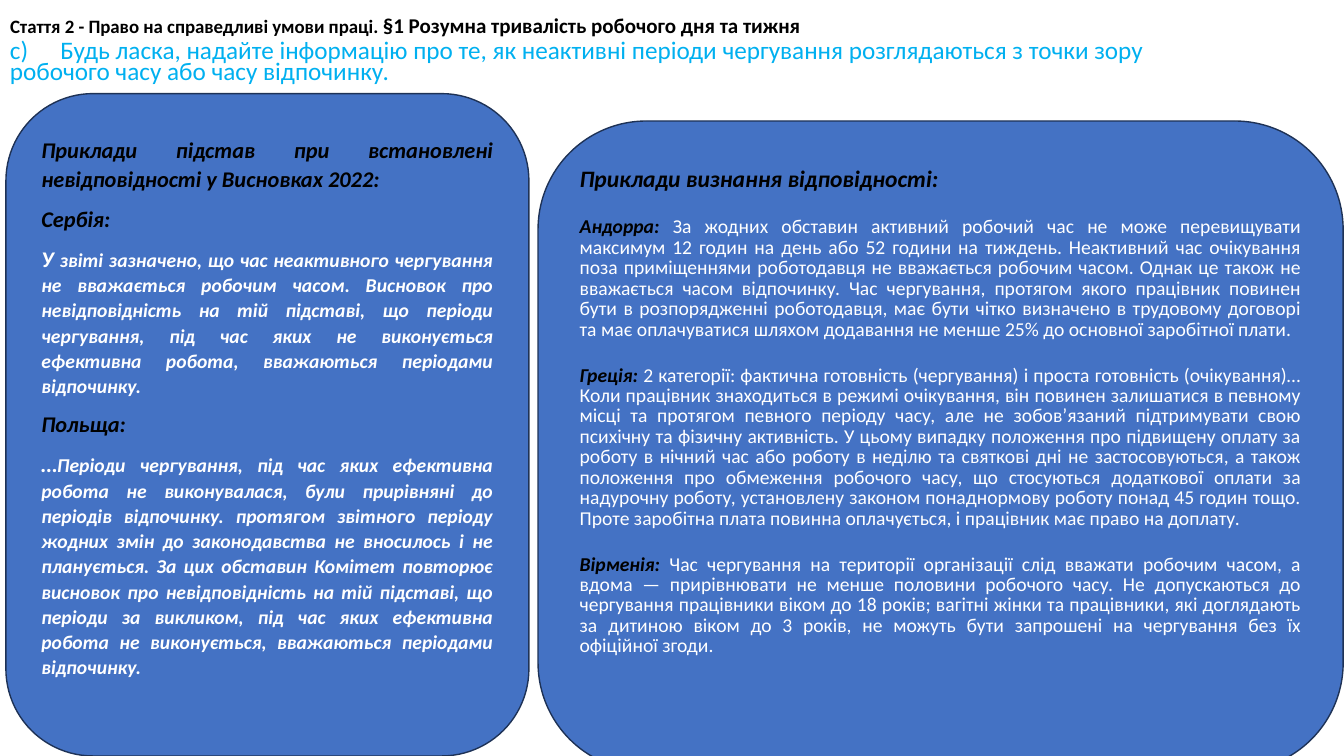
import dataclasses

import pptx
import pptx.dml.color
import pptx.enum.shapes
import pptx.enum.text
import pptx.util

Cm = pptx.util.Cm
Pt = pptx.util.Pt
RGB = pptx.dml.color.RGBColor
ALIGN = pptx.enum.text.PP_ALIGN


@dataclasses.dataclass(frozen=True)
class Theme:
    font: str = "Calibri"
    black: RGB = RGB(0x00, 0x00, 0x00)
    white: RGB = RGB(0xFF, 0xFF, 0xFF)
    question: RGB = RGB(0x00, 0xB0, 0xF0)
    panel: RGB = RGB(0x44, 0x72, 0xC4)
    outline: RGB = RGB(0x1E, 0x32, 0x56)
    article_size: float = 13.5
    section_size: float = 15
    question_size: float = 18
    heading_size: float = 16
    wide_heading_size: float = 16.8
    body_size: float = 14


THEME = Theme()

FINDINGS = [
    ("Сербія:", "У ",
     "звіті зазначено, що час неактивного чергування не вважається робочим часом. "
     "Висновок про невідповідність на тій підставі, що періоди чергування, під час яких "
     "не виконується ефективна робота, вважаються періодами відпочинку."),
    ("Польща:", "…",
     "Періоди чергування, під час яких ефективна робота не виконувалася, були прирівняні "
     "до періодів відпочинку. протягом звітного періоду жодних змін до законодавства не "
     "вносилось і не планується. За цих обставин Комітет повторює висновок про "
     "невідповідність на тій підставі, що періоди за викликом, під час яких ефективна "
     "робота не виконується, вважаються періодами відпочинку."),
]

CONFORMITY = [
    ("Андорра: ",
     "За жодних обставин активний робочий час не може перевищувати максимум 12 годин на "
     "день або 52 години на тиждень. Неактивний час очікування поза приміщеннями "
     "роботодавця не вважається робочим часом. Однак це також не вважається часом "
     "відпочинку. Час чергування, протягом якого працівник повинен бути в розпорядженні "
     "роботодавця, має бути чітко визначено в трудовому договорі та має оплачуватися "
     "шляхом додавання не менше 25% до основної заробітної плати."),
    ("Греція: ",
     "2 категорії: фактична готовність (чергування) і проста готовність (очікування)…"
     "Коли працівник знаходиться в режимі очікування, він повинен залишатися в певному "
     "місці та протягом певного періоду часу, але не зобов’язаний підтримувати свою "
     "психічну та фізичну активність. У цьому випадку положення про підвищену оплату за "
     "роботу в нічний час або роботу в неділю та святкові дні не застосовуються, а також "
     "положення про обмеження робочого часу, що стосуються додаткової оплати за "
     "надурочну роботу, установлену законом понаднормову роботу понад 45 годин тощо. "
     "Проте заробітна плата повинна оплачується, і працівник має право на доплату."),
    ("Вірменія: ",
     "Час чергування на території організації слід вважати робочим часом, а вдома — "
     "прирівнювати не менше половини робочого часу. Не допускаються до чергування "
     "працівники віком до 18 років; вагітні жінки та працівники, які доглядають за "
     "дитиною віком до 3 років, не можуть бути запрошені на чергування без їх офіційної "
     "згоди."),
]


def add_run(p, text, size, color, bold=False, italic=False):
    r = p.add_run()
    r.text = text
    r.font.name = THEME.font
    r.font.size = Pt(size)
    r.font.color.rgb = color
    r.font.bold = bold
    r.font.italic = italic


def prepare_frame(sp, top_inset):
    """Wrap the text and start it at the given depth below the top."""
    tf = sp.text_frame
    tf.word_wrap = True
    tf.auto_size = pptx.enum.text.MSO_AUTO_SIZE.NONE
    tf.vertical_anchor = pptx.enum.text.MSO_ANCHOR.TOP
    tf.margin_top = top_inset
    return tf


def add_paragraph(tf, align, line_spacing, before=0, after=0):
    """Use the empty first paragraph, then append new ones."""
    p = tf.paragraphs[0] if not tf.paragraphs[0].runs else tf.add_paragraph()
    p.alignment = align
    p.line_spacing = line_spacing
    p.space_before = Pt(before)
    p.space_after = Pt(after)
    return p


def add_panel(s, left, top, width, height, top_inset):
    sp = s.shapes.add_shape(pptx.enum.shapes.MSO_SHAPE.ROUNDED_RECTANGLE,
                            left, top, width, height)
    sp.shadow.inherit = False
    sp.fill.solid()
    sp.fill.fore_color.rgb = THEME.panel
    sp.line.color.rgb = THEME.outline
    sp.line.width = Pt(1)
    return prepare_frame(sp, top_inset)


def set_title(s):
    sp = s.shapes.title
    sp.left, sp.top, sp.width, sp.height = Cm(0), Cm(0), Cm(24.36), Cm(1.63)
    p = add_paragraph(prepare_frame(sp, Cm(0.48)), ALIGN.LEFT, 0.7)
    add_run(p, "Стаття 2 - Право на справедливі умови праці. ",
            THEME.article_size, THEME.black, bold=True)
    add_run(p, "§1 Розумна тривалість робочого дня та тижня",
            THEME.section_size, THEME.black, bold=True)


def add_question(s):
    sp = s.shapes.add_textbox(Cm(0), Cm(0.38), Cm(29.21), Cm(2.67))
    p = add_paragraph(prepare_frame(sp, Cm(0.69)), ALIGN.LEFT, 0.7)
    add_run(p, "c)\tБудь ласка, надайте інформацію про те, як неактивні періоди чергування "
               "розглядаються з точки зору робочого часу або часу відпочинку.",
            THEME.question_size, THEME.question)


def add_findings(s):
    tf = add_panel(s, Cm(0.15), Cm(2.36), Cm(13.18), Cm(16.69), Cm(0.38))

    def add_line(*runs):
        p = add_paragraph(tf, ALIGN.JUSTIFY, 1.07, after=8)
        for text, size, color in runs:
            add_run(p, text, size, color, bold=True, italic=True)

    add_line(("Приклади підстав при встановлені невідповідності у Висновках 2022:",
              THEME.heading_size, THEME.black))
    for country, opening, finding in FINDINGS:
        add_line((country, THEME.heading_size, THEME.black))
        add_line((opening, THEME.heading_size, THEME.white),
                 (finding, THEME.body_size, THEME.white))


def add_conformity(s):
    tf = add_panel(s, Cm(13.56), Cm(3.05), Cm(20.29), Cm(16.38), Cm(0.38))
    spacing = dict(align=ALIGN.JUSTIFY, line_spacing=0.87, before=10, after=8)
    add_run(add_paragraph(tf, **spacing), "Приклади визнання відповідності:",
            THEME.wide_heading_size, THEME.black, bold=True, italic=True)
    for country, practice in CONFORMITY:
        p = add_paragraph(tf, **spacing)
        add_run(p, country, THEME.body_size, THEME.black, bold=True, italic=True)
        add_run(p, practice, THEME.body_size, THEME.white)


def main():
    prs = pptx.Presentation()
    prs.slide_width, prs.slide_height = Cm(33.87), Cm(19.05)
    s = prs.slides.add_slide(prs.slide_layouts[5])
    set_title(s)
    add_findings(s)
    add_conformity(s)
    add_question(s)
    prs.save("out.pptx")


if __name__ == "__main__":
    main()
